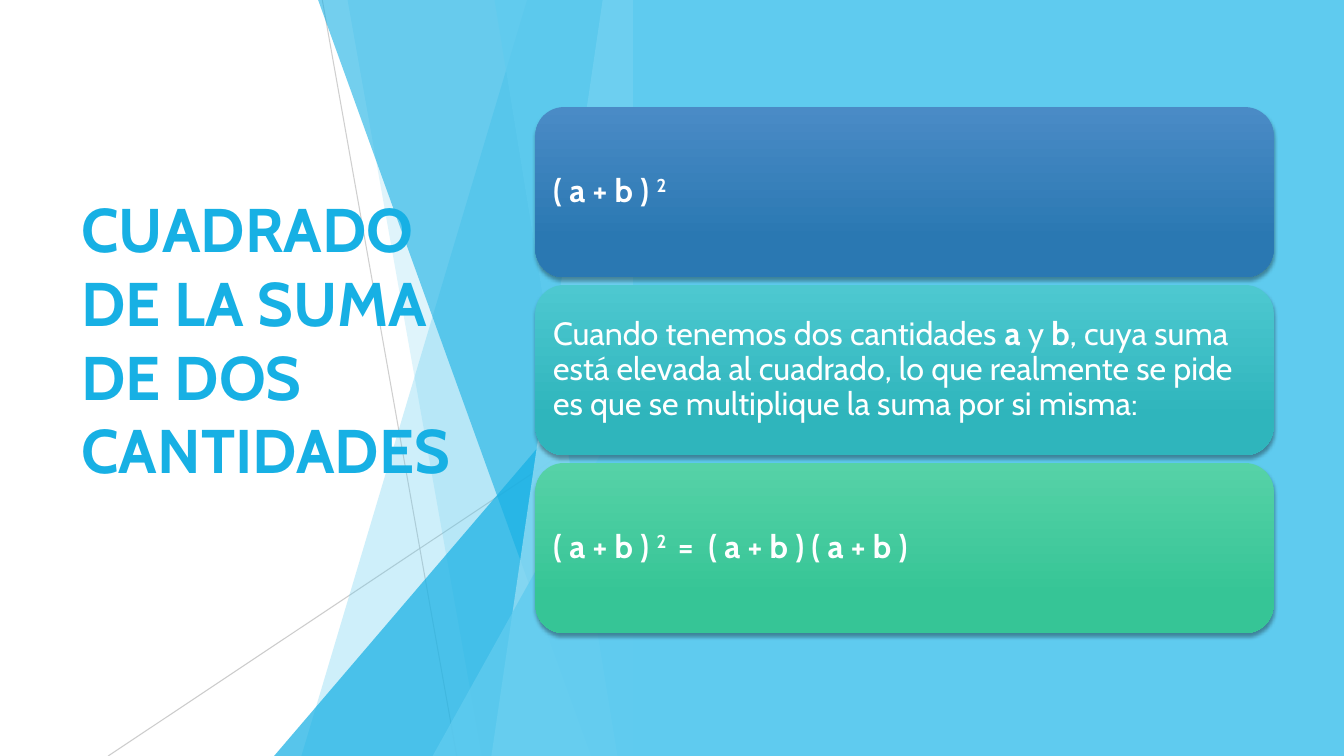
from lxml.etree import SubElement
from pptx import Presentation
from pptx.dml.color import RGBColor
from pptx.enum.shapes import MSO_CONNECTOR as CONN, MSO_SHAPE as SHAPE
from pptx.enum.text import MSO_ANCHOR as ANCHOR, MSO_AUTO_SIZE as AUTO, PP_ALIGN as ALIGN
from pptx.oxml.ns import qn
from pptx.util import Pt

PX = 9525  # 96 px to the inch
W, H = 1280, 720
FONT = "Cabin"
SKY, BLUE, PALE, GREY, WHITE = "5FCBEF", "17B0E4", "9FE0F5", "BFBFBF", "FFFFFF"

# Fill, opacity in percent, top x and bottom x of the slanted left edge
BACK_FACETS = [(SKY, 30, 502, 287), (SKY, 20, 331, 459)]
FRONT_FACETS = [(BLUE, 60, 303, 563), (PALE, 70, 574, 468), (SKY, 65, 471, 588)]

# Gradient colours, then runs as (text, bold, superscript)
CARDS = [
    ("4A8BC6", "2A78B2", [("( a + b ) ", True, False), ("2", True, True)]),
    ("4DC8D0", "2FB5BC", [
        ("Cuando tenemos dos cantidades ", False, False), ("a", True, False),
        (" y ", False, False), ("b", True, False),
        (", cuya suma está elevada al cuadrado, lo que realmente se pide "
         "es que se multiplique la suma por si misma:", False, False)]),
    ("56D2A7", "36C596", [
        ("( a + b ) ", True, False), ("2 ", True, True),
        (" =  ( a + b ) ( a + b )", True, False)]),
]


def px(*lengths):
    return [int(n * PX) for n in lengths]


def rgb(color):
    return RGBColor.from_string(color)


def paint(fill, parent, color, opacity=100):
    fill.solid()
    fill.fore_color.rgb = rgb(color)
    if opacity < 100:
        clr = next(parent.iter(qn("a:srgbClr")))
        SubElement(clr, qn("a:alpha"), val=str(opacity * 1000))


def finish(sp, color, opacity=100):
    sp.shadow.inherit = False
    paint(sp.fill, sp.element.spPr, color, opacity)
    sp.line.fill.background()


def add_line(s, ends, opacity):
    line = s.shapes.add_connector(CONN.STRAIGHT, *px(*ends))
    line.line.width = Pt(0.75)
    paint(line.line.fill, line.element.spPr, GREY, opacity)
    SubElement(line.element.spPr, qn("a:effectLst"))


def add_facet(s, right, color, opacity, top_x, bottom_x):
    pen = s.shapes.build_freeform(top_x, 0, scale=PX)
    pen.add_line_segments([(right, 0), (right, H), (bottom_x, H)], close=True)
    finish(pen.convert_to_shape(), color, opacity)


def add_triangle(s, right, left, top, color, opacity):
    sp = s.shapes.add_shape(SHAPE.ISOSCELES_TRIANGLE,
                            *px(left, top, right - left, H - top))
    sp.adjustments[0] = 1
    finish(sp, color, opacity)


def add_backdrop(s, right):
    """Thin lines and translucent facets that end at the panel's left edge."""
    add_line(s, (right - 296, 0, right - 168, H), 75)
    add_line(s, (right, 387, right - 500, H), 80)
    for facet in BACK_FACETS:
        add_facet(s, right, *facet)
    add_triangle(s, right, 261, 320, BLUE, 72)
    for facet in FRONT_FACETS:
        add_facet(s, right, *facet)
    add_triangle(s, right, 412, 377, SKY, 80)

    panel = s.shapes.add_shape(SHAPE.RECTANGLE, *px(right, 0, W - right, H))
    finish(panel, SKY)


def add_title(s, x, y, w, h):
    title = s.shapes.title
    title.element.getparent().append(title.element)  # in front of the facets
    title.left, title.top, title.width, title.height = px(x, y, w, h)
    tf = title.text_frame
    tf.text = "CUADRADO DE LA SUMA DE DOS CANTIDADES"
    tf.word_wrap = True
    tf.auto_size = AUTO.NONE
    tf.vertical_anchor = ANCHOR.MIDDLE
    tf.margin_bottom = 80 * PX  # lifts the text by half a line
    p = tf.paragraphs[0]
    p.alignment = ALIGN.LEFT
    font = p.runs[0].font
    font.name, font.size, font.bold = FONT, Pt(44), True
    font.color.rgb = rgb(BLUE)


def add_card(s, x, y, w, h, top_color, low_color, runs):
    sp = s.shapes.add_shape(SHAPE.ROUNDED_RECTANGLE, *px(x, y, w, h))
    sp.line.fill.background()

    # Vertical gradient
    sp.fill.gradient()
    sp.fill.gradient_angle = 270
    for stop, position, color in zip(sp.fill.gradient_stops, (0, 0.78),
                                     (top_color, low_color)):
        stop.position = position
        stop.color.rgb = rgb(color)

    # Soft shadow below
    sp.shadow.inherit = False
    effects = sp.element.spPr.find(qn("a:effectLst"))
    shadow = SubElement(effects, qn("a:outerShdw"), blurRad=str(Pt(3)),
                        dist=str(Pt(2)), dir="5400000", rotWithShape="0")
    clr = SubElement(shadow, qn("a:srgbClr"), val="000000")
    SubElement(clr, qn("a:alpha"), val="35000")

    # Text
    tf = sp.text_frame
    tf.word_wrap = True
    tf.vertical_anchor = ANCHOR.MIDDLE
    tf.margin_left = tf.margin_right = tf.margin_top = tf.margin_bottom = 9 * PX
    p = tf.paragraphs[0]
    p.alignment = ALIGN.LEFT
    p.line_spacing = 0.9
    for text, bold, superscript in runs:
        r = p.add_run()
        r.text = text
        r.font.name, r.font.size, r.font.bold = FONT, Pt(23), bold
        r.font.color.rgb = rgb(WHITE)
        if superscript:
            r.font._element.set("baseline", "30000")


def add_cards(s, x, y, w, h, card_h):
    pitch = (h - card_h) / (len(CARDS) - 1)
    for i, card in enumerate(CARDS):
        add_card(s, x, y + i * pitch, w, card_h, *card)


def main():
    prs = Presentation()
    prs.slide_width, prs.slide_height = px(W, H)
    s = prs.slides.add_slide(prs.slide_layouts[5])
    add_backdrop(s, 603)
    add_title(s, 68, 145, 372, 430)
    add_cards(s, 510, 102, 703, 501, 162)
    prs.save("out.pptx")


if __name__ == "__main__":
    main()
